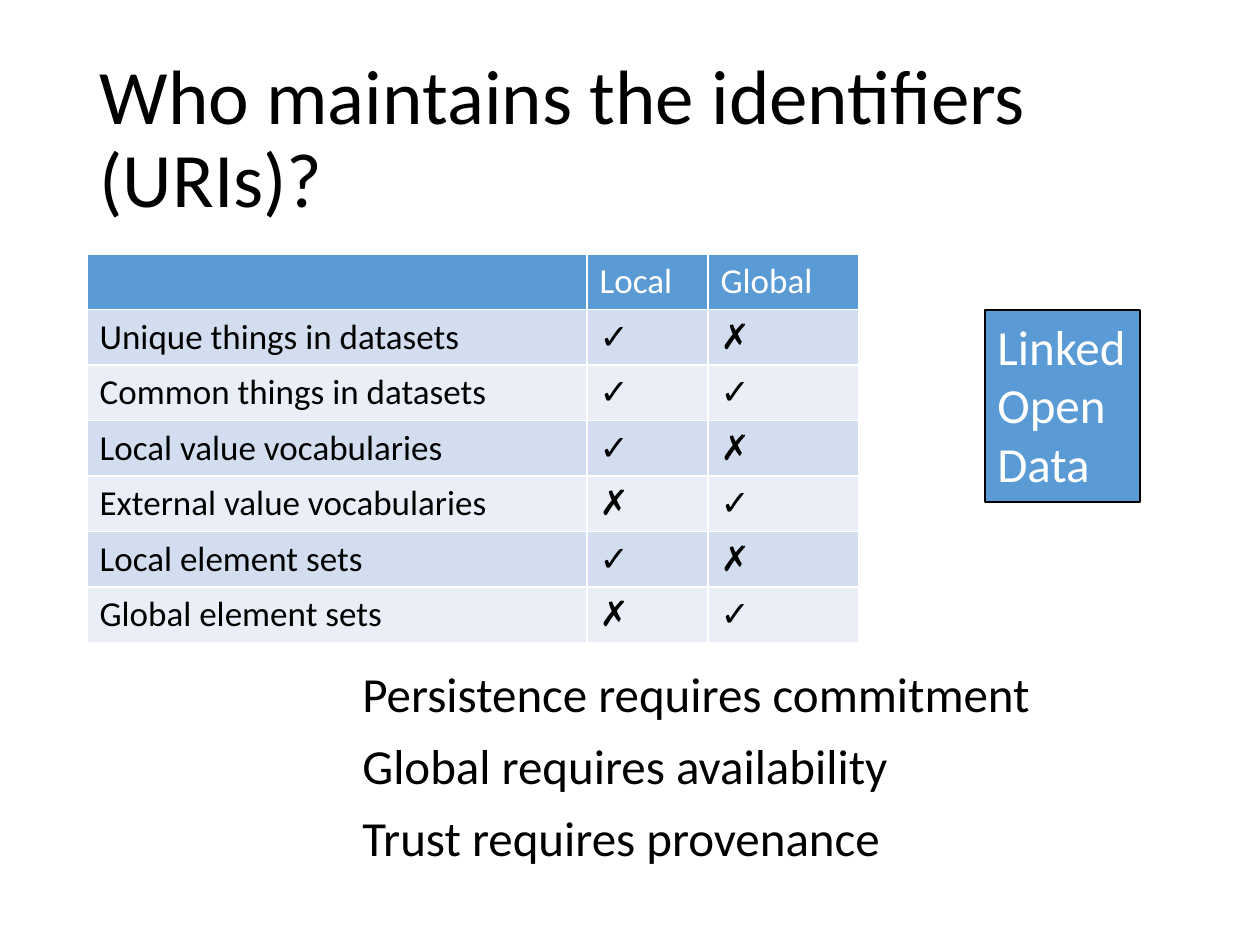
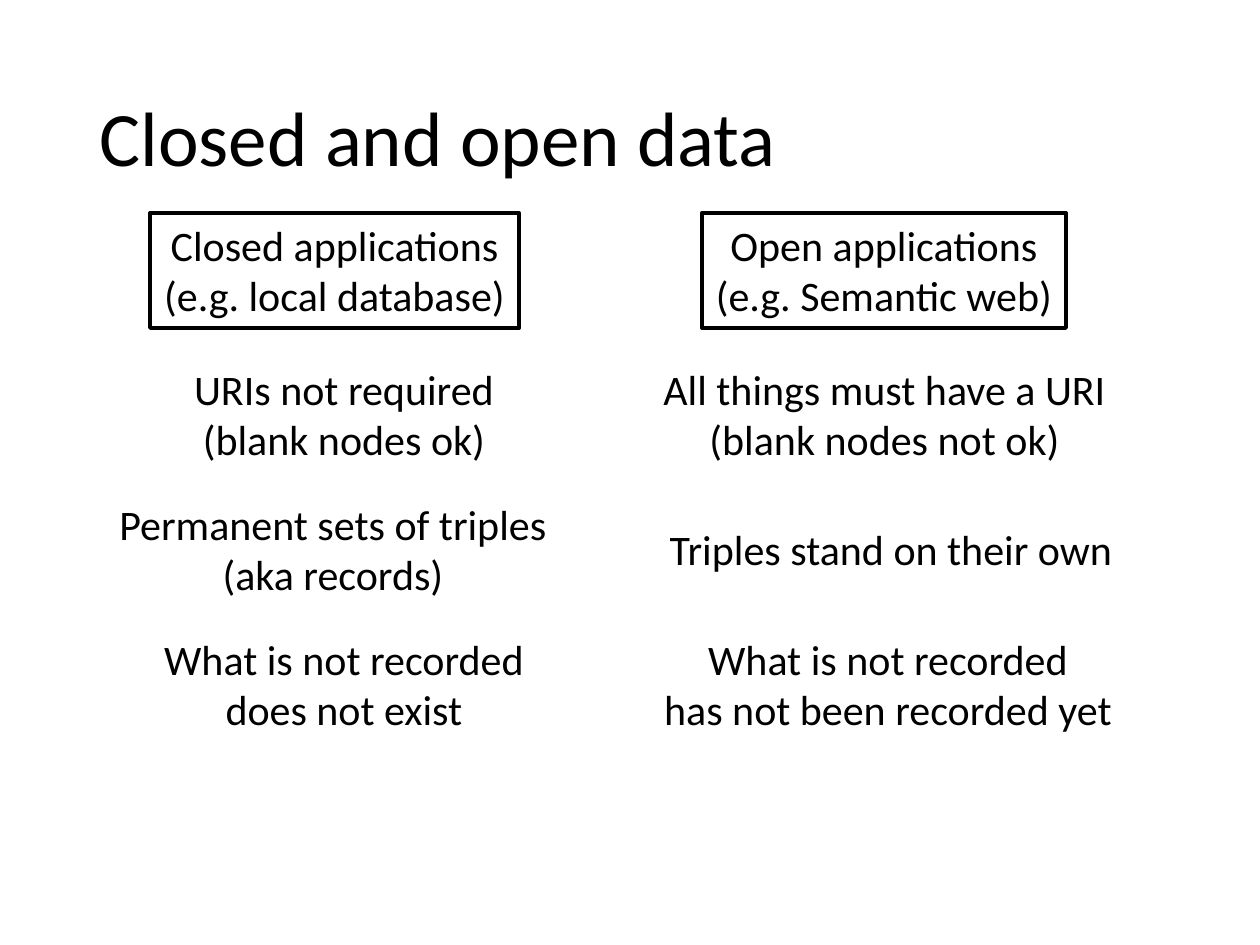
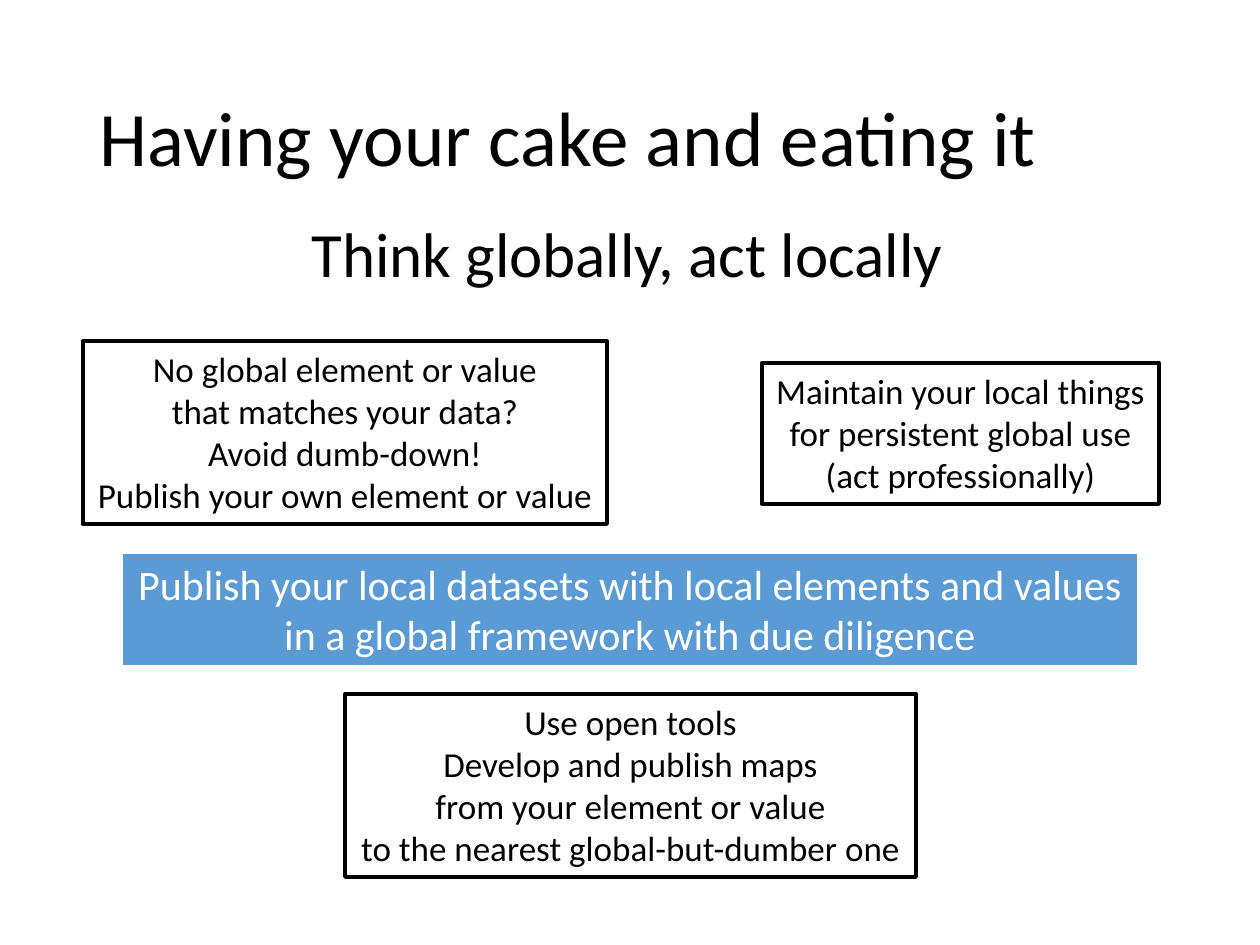
from dataclasses import dataclass

from pptx import Presentation
from pptx.dml.color import RGBColor
from pptx.enum.shapes import MSO_SHAPE as Preset
from pptx.enum.text import MSO_ANCHOR as Anchor, MSO_AUTO_SIZE as AutoSize, PP_ALIGN as Align
from pptx.util import Emu, Pt

PX_PER_INCH = 126
PX_PER_POINT = PX_PER_INCH / 72


@dataclass(frozen=True)
class Theme:
    """Colours, type sizes in points and line widths of the deck."""
    font: str = "Calibri"
    ink: str = "000000"
    paper: str = "FFFFFF"
    accent: str = "5B9BD5"
    bands: tuple = ("D2DEEF", "EAEFF7")
    title: int = 44
    motto: int = 36
    statement: int = 28
    point: int = 24
    detail: int = 20
    thin: float = 1.5
    thick: float = 2.25


THEME = Theme()


def px(length):
    """Turn pixels into EMU."""
    return Emu(round(length * 914400 / PX_PER_INCH))


def colour(code):
    """Turn a hex code into a colour."""
    return RGBColor.from_string(code)


def text_height(lines, size):
    """Give the height in px of a box that fits its lines."""
    return round((lines * size * 1.22 + 7.2) * PX_PER_POINT)


def style_text(frame, size, ink=THEME.ink, align=Align.LEFT):
    """Format every paragraph and run of a text frame."""
    for paragraph in frame.paragraphs:
        paragraph.alignment = align
        for run in paragraph.runs:
            run.font.name = THEME.font
            run.font.size = Pt(size)
            run.font.bold = False
            run.font.color.rgb = colour(ink)


def fit_text(shape, text, size, ink, align):
    """Fill a shape with unwrapped text that sets its size."""
    frame = shape.text_frame
    frame.text = text
    frame.word_wrap = False
    frame.auto_size = AutoSize.SHAPE_TO_FIT_TEXT
    frame.vertical_anchor = Anchor.TOP
    style_text(frame, size, ink, align)


def add_titled_slide(deck, title):
    """Add a title-only slide with the shared title style."""
    slide = deck.slides.add_slide(deck.slide_layouts[5])
    heading = slide.shapes.title
    heading.left, heading.top, heading.width, heading.height = map(px, (87, 50, 1086, 183))
    frame = heading.text_frame
    frame.text = title
    frame.word_wrap = True
    frame.auto_size = AutoSize.NONE
    frame.vertical_anchor = Anchor.MIDDLE
    frame.paragraphs[0].line_spacing = 0.9
    style_text(frame, THEME.title)
    return slide


def add_text(slide, left, top, width, text, size, align=Align.LEFT):
    """Add plain text."""
    height = text_height(text.count("\n") + 1, size)
    box = slide.shapes.add_textbox(px(left), px(top), px(width), px(height))
    fit_text(box, text, size, THEME.ink, align)


def add_box(slide, left, top, width, text, size, fill=None, line=THEME.ink,
            weight=THEME.thick, align=Align.CENTER):
    """Add an outlined box, with white text if it is filled."""
    height = text_height(text.count("\n") + 1, size)
    box = slide.shapes.add_shape(Preset.RECTANGLE, px(left), px(top), px(width), px(height))
    box.shadow.inherit = False
    if fill:
        box.fill.solid()
        box.fill.fore_color.rgb = colour(fill)
    else:
        box.fill.background()
    box.line.color.rgb = colour(line)
    box.line.width = Pt(weight)
    fit_text(box, text, size, THEME.paper if fill else THEME.ink, align)


def add_banded_table(slide, left, top, widths, height, rows):
    """Add a table with an accent header and banded rows."""
    frame = slide.shapes.add_table(
        len(rows), len(widths), px(left), px(top), px(sum(widths)), px(height))
    table = frame.table
    for column, width in zip(table.columns, widths):
        column.width = px(width)
    for r, row in enumerate(rows):
        fill = THEME.bands[(r - 1) % 2] if r else THEME.accent
        for c, text in enumerate(row):
            cell = table.cell(r, c)
            cell.text = text
            cell.fill.solid()
            cell.fill.fore_color.rgb = colour(fill)
            style_text(cell.text_frame, THEME.detail, THEME.ink if r else THEME.paper)


def add_identifiers_slide(deck):
    """Show who maintains which identifiers."""
    slide = add_titled_slide(deck, "Who maintains the identifiers (URIs)?")
    add_banded_table(slide, 87, 254, (500, 121, 151), 382, (
        ("", "Local", "Global"),
        ("Unique things in datasets", "✓", "✗"),
        ("Common things in datasets", "✓", "✓"),
        ("Local value vocabularies", "✓", "✗"),
        ("External value vocabularies", "✗", "✓"),
        ("Local element sets", "✓", "✗"),
        ("Global element sets", "✗", "✓"),
    ))
    requirements = (
        (700, "Persistence requires commitment"),
        (556, "Global requires availability"),
        (548, "Trust requires provenance"),
    )
    for i, (width, requirement) in enumerate(requirements):
        add_text(slide, 350, 657 + 72 * i, width, requirement, THEME.statement)
    add_box(slide, 985, 310, 155, "Linked\nOpen\nData", THEME.statement,
            fill=THEME.accent, weight=THEME.thin, align=Align.LEFT)


def add_comparison_slide(deck):
    """Compare closed with open applications."""
    slide = add_titled_slide(deck, "Closed and open data")
    add_box(slide, 150, 213, 369, "Closed applications\n(e.g. local database)", THEME.point)
    add_box(slide, 702, 213, 364, "Open applications\n(e.g. Semantic web)", THEME.point)
    contrasts = (
        ((180, 328, "URIs not required\n(blank nodes ok)"),
         (649, 471, "All things must have a URI\n(blank nodes not ok)")),
        ((105, 456, "Permanent sets of triples\n(aka records)"),
         (655, 472, "Triples stand on their own")),
        ((150, 388, "What is not recorded\ndoes not exist"),
         (649, 478, "What is not recorded\nhas not been recorded yet")),
    )
    row_height = text_height(2, THEME.point)
    for i, contrast in enumerate(contrasts):
        for left, width, text in contrast:
            height = text_height(text.count("\n") + 1, THEME.point)
            top = 357 + 135 * i + (row_height - height) // 2
            add_text(slide, left, top, width, text, THEME.point, Align.CENTER)


def add_advice_slide(deck):
    """Advise on publishing local data globally."""
    slide = add_titled_slide(deck, "Having your cake and eating it")
    add_text(slide, 299, 208, 663, "Think globally, act locally", THEME.motto)
    advice = (
        (83, 341, 524, "No global element or value\nthat matches your data?\n"
                       "Avoid dumb-down!\nPublish your own element or value"),
        (345, 694, 571, "Use open tools\nDevelop and publish maps\n"
                        "from your element or value\nto the nearest global-but-dumber one"),
        (762, 363, 397, "Maintain your local things\nfor persistent global use\n"
                        "(act professionally)"),
    )
    for left, top, width, text in advice:
        add_box(slide, left, top, width, text, THEME.detail)
    add_box(slide, 121, 552, 1018,
            "Publish your local datasets with local elements and values\n"
            "in a global framework with due diligence",
            THEME.point, fill=THEME.accent, line=THEME.paper)


def main():
    """Build and save the deck."""
    deck = Presentation()
    deck.slide_width, deck.slide_height = px(1260), px(945)
    add_identifiers_slide(deck)
    add_comparison_slide(deck)
    add_advice_slide(deck)
    deck.save("out.pptx")


if __name__ == "__main__":
    main()
